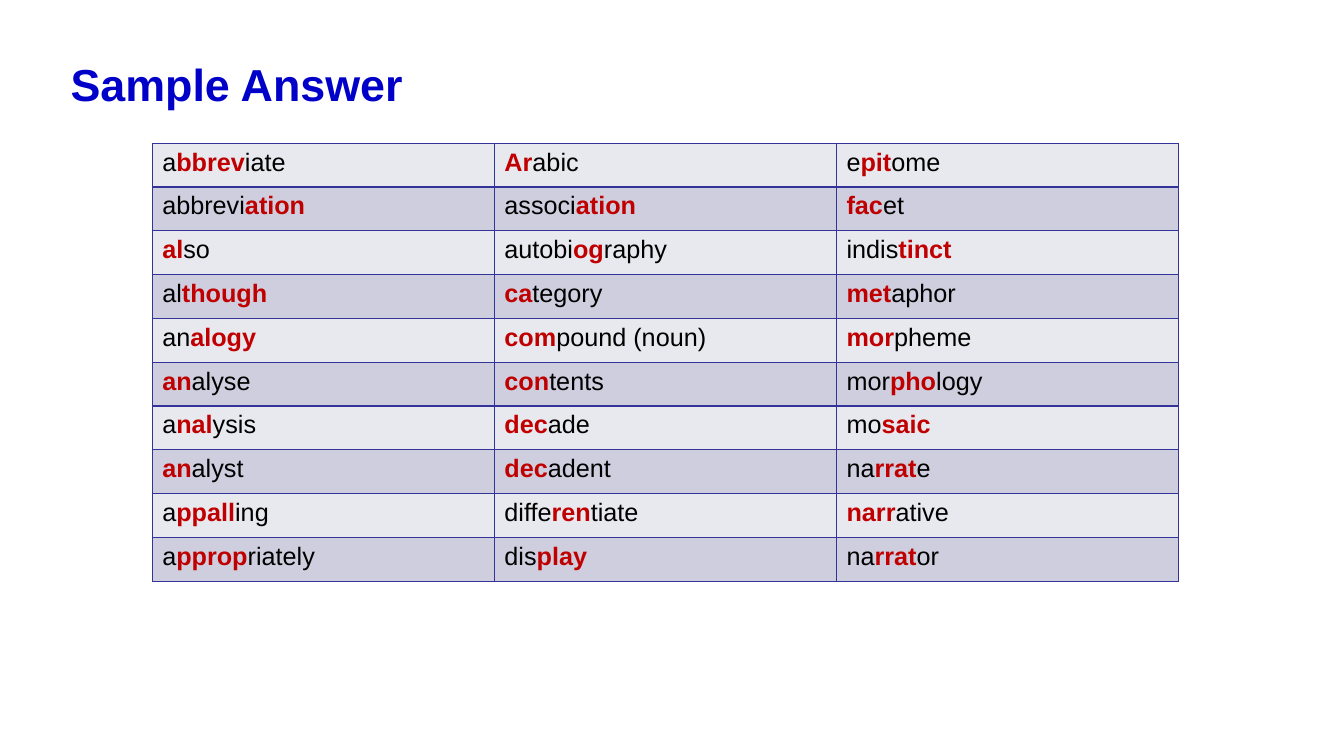
from dataclasses import dataclass

from lxml import etree
from pptx import Presentation
from pptx.dml.color import RGBColor as Color
from pptx.enum.text import MSO_ANCHOR as Anchor, PP_ALIGN as Align
from pptx.oxml.ns import qn
from pptx.util import Inches, Pt


@dataclass(frozen=True)
class Theme:
    font: str = "Arial"
    title_size: int = 32
    word_size: int = 18
    title: str = "0000C8"
    text: str = "000000"
    stress: str = "C00000"
    border: str = "333399"
    bands: tuple = ("E8E8EF", "CECEDE")


THEME = Theme()
TITLE_BOX = (0.6, 0.47, 12.04, 0.71)
TABLE_BOX = (1.51, 1.42, 10.18, 4.35)

# fmt: off
WORDS = [
    ("a|bbrev|iate", "|Ar|abic", "e|pit|ome"),
    ("abbrevi|ation", "associ|ation", "|fac|et"),
    ("|al|so", "autobi|og|raphy", "indis|tinct"),
    ("al|though", "|ca|tegory", "|met|aphor"),
    ("an|alogy", "|com|pound (noun)", "|mor|pheme"),
    ("|an|alyse", "|con|tents", "mor|pho|logy"),
    ("a|nal|ysis", "|dec|ade", "mo|saic"),
    ("|an|alyst", "|dec|adent", "na|rrat|e"),
    ("a|ppall|ing", "diffe|ren|tiate", "|narr|ative"),
    ("a|pprop|riately", "dis|play", "na|rrat|or"),
]
# fmt: on


def add_title(page, box, text):
    title = page.shapes.title
    title.left, title.top, title.width, title.height = map(Inches, box)
    frame = title.text_frame
    frame.text = text
    frame.vertical_anchor = Anchor.MIDDLE
    para = frame.paragraphs[0]
    para.alignment = Align.LEFT
    para.font.name = THEME.font
    para.font.size = Pt(THEME.title_size)
    para.font.bold = True
    para.font.color.rgb = Color.from_string(THEME.title)


def add_borders(cell):
    properties = cell._tc.get_or_add_tcPr()
    for position, side in enumerate(("lnL", "lnR", "lnT", "lnB")):
        line = etree.Element(qn(f"a:{side}"), w=str(Pt(1)))
        fill = etree.SubElement(line, qn("a:solidFill"))
        etree.SubElement(fill, qn("a:srgbClr"), val=THEME.border)
        properties.insert(position, line)


def write_word(cell, word):
    para = cell.text_frame.paragraphs[0]
    para.font.name = THEME.font
    para.font.size = Pt(THEME.word_size)
    for index, part in enumerate(word.split("|")):
        if part:
            stressed = index % 2 == 1
            span = para.add_run()
            span.text = part
            span.font.bold = stressed
            span.font.color.rgb = Color.from_string(THEME.stress if stressed else THEME.text)


def add_word_table(page, box, words):
    left, top, width, height = map(Inches, box)
    table = page.shapes.add_table(len(words), len(words[0]), left, top, width, height).table
    table.first_row = False
    table.horz_banding = False
    for row_index, row in enumerate(words):
        for column_index, word in enumerate(row):
            cell = table.cell(row_index, column_index)
            cell.fill.solid()
            cell.fill.fore_color.rgb = Color.from_string(THEME.bands[row_index % 2])
            add_borders(cell)
            write_word(cell, word)


def main():
    deck = Presentation()
    deck.slide_width, deck.slide_height = Inches(13.33), Inches(7.5)
    page = deck.slides.add_slide(deck.slide_layouts[5])
    add_title(page, TITLE_BOX, "Sample Answer")
    add_word_table(page, TABLE_BOX, WORDS)
    deck.save("out.pptx")


if __name__ == "__main__":
    main()
